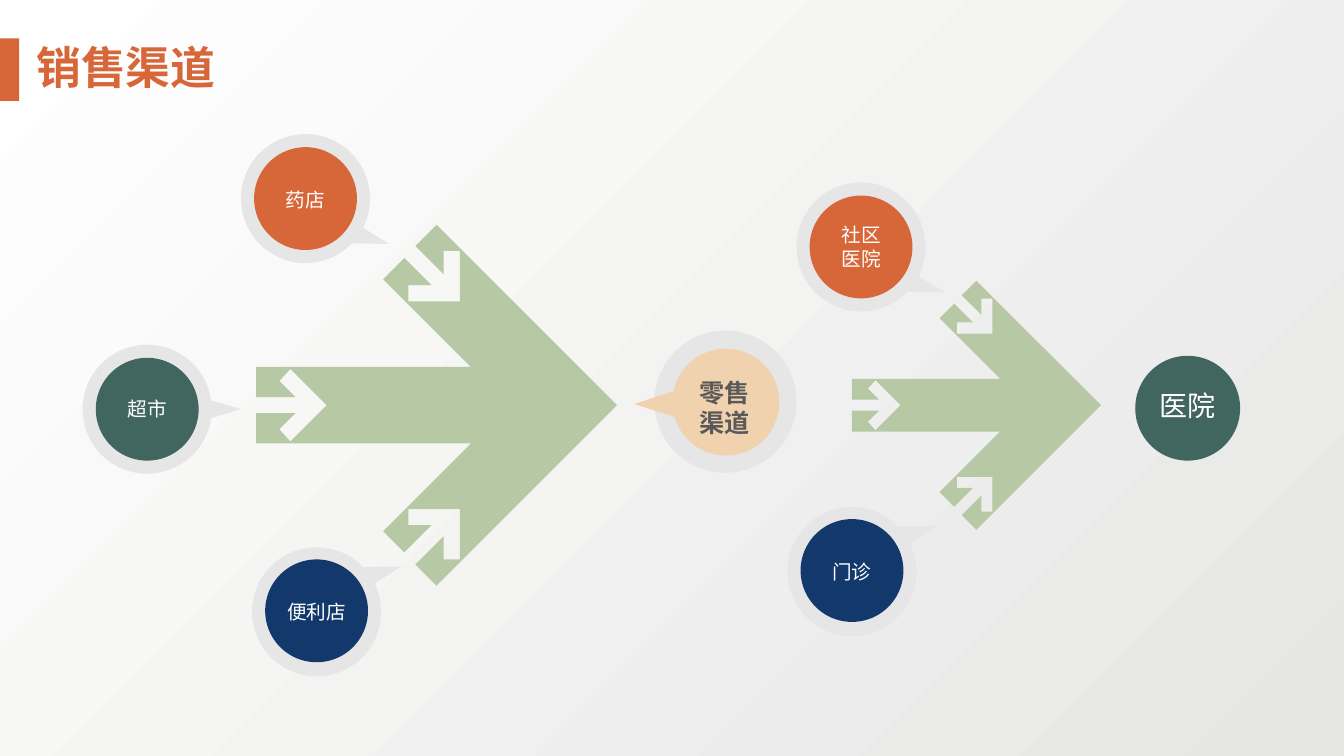
from math import cos, radians, sin

from lxml import etree
from pptx import Presentation
from pptx import util as u
from pptx.dml.color import RGBColor
from pptx.enum import shapes, text
from pptx.oxml.ns import qn

FONT = "Noto Sans CJK SC"
HUES = {
    "rust": "D76739", "pine": "416660", "navy": "13396C", "sand": "F0D2AF",
    "sage": "B7C8A5", "mist": "E7E6E6", "ink": "595959", "white": "FFFFFF",
    "haze": "E6E6E5",
}


def paint(shape, hue):
    shape.shadow.inherit = False
    shape.fill.solid()
    shape.fill.fore_color.rgb = RGBColor.from_string(HUES[hue])
    shape.line.fill.background()
    return shape


def write(shape, words, size=14, hue="white", bold=False):
    """Fill a shape with centred text, one paragraph a line."""
    frame = shape.text_frame
    frame.word_wrap = True
    frame.auto_size = text.MSO_AUTO_SIZE.NONE
    frame.vertical_anchor = text.MSO_ANCHOR.MIDDLE
    frame.margin_left = frame.margin_right = 0
    frame.margin_top = frame.margin_bottom = 0
    frame.text = words
    for para in frame.paragraphs:
        para.alignment = text.PP_ALIGN.CENTER
        font = para.runs[0].font
        font.name, font.size, font.bold = FONT, u.Pt(size), bold
        font.color.rgb = RGBColor.from_string(HUES[hue])
        east = etree.SubElement(para.runs[0]._r.get_or_add_rPr(), qn("a:ea"))
        east.set("typeface", FONT)


deck = Presentation()
deck.slide_width, deck.slide_height = u.Inches(13.33), u.Inches(7.5)
col, row = deck.slide_width / 13.33, deck.slide_height / 7.5
slide = deck.slides.add_slide(deck.slide_layouts[5])
add = slide.shapes.add_shape
OVAL = shapes.MSO_SHAPE.OVAL

# Background
back = slide.background.fill
back.gradient()
back.gradient_angle = 135
for stop, hue in zip(back.gradient_stops, ("haze", "white")):
    stop.color.rgb = RGBColor.from_string(HUES[hue])

# Title
paint(add(shapes.MSO_SHAPE.RECTANGLE, 0, int(0.38 * row),
          int(0.19 * col), int(0.62 * row)), "rust")
title = slide.shapes.title
title.left, title.top = int(0.02 * col), int(0.34 * row)
title.width, title.height = int(2.46 * col), int(0.64 * row)
write(title, "销售渠道", size=32, hue="rust", bold=True)

# Merging arrows: upper half, measured from the tip, then mirrored
half = [
    (0, 0), (-1.79, -1.79), (-2, -1.58), (-1.72, -1.3), (-1.72, -1.53),
    (-1.56, -1.53), (-1.56, -1.03), (-2.07, -1.03), (-2.07, -1.19),
    (-1.84, -1.19), (-2.11, -1.46), (-2.32, -1.25), (-1.45, -0.38),
    (-3.58, -0.38), (-3.58, -0.08), (-3.19, -0.08), (-3.35, -0.24),
    (-3.24, -0.36), (-2.88, 0),
]
arrow = half + [(x, -y) for x, y in half[-2:0:-1]]
for tip, zoom in ((6.12, 1), (10.92, 0.69)):
    dots = [(int((tip + zoom * x) * col), int((4.02 + zoom * y) * row))
            for x, y in arrow]
    pen = slide.shapes.build_freeform(*dots[0])
    pen.add_line_segments(dots[1:], close=True)
    paint(pen.convert_to_shape(), "sage")

# Ring behind the retail bubble
paint(add(OVAL, int(6.49 * col), int(3.28 * row),
          int(1.41 * col), int(1.41 * row)), "mist")

# Bubbles: centre, radius, tail tip from centre, tail's two angles, colour
down, flat, up = (0.83, 0.45, 27, 44), (0.93, 0, -8, 8), (0.84, -0.45, -44, -26)
bubbles = [
    (3.03, 1.97, 0.64, down, "mist"),
    (1.46, 4.06, 0.64, flat, "mist"),
    (3.14, 6.07, 0.64, up, "mist"),
    (7.2, 3.99, 0.53, (-0.91, 0.02, 164, 192), "sand"),
    (8.54, 2.45, 0.64, down, "mist"),
    (8.45, 5.67, 0.64, up, "mist"),
]
for x, y, r, (dx, dy, near, far), hue in bubbles:
    last = 360 + near
    turns = [far] + [a for a in range(0, 541, 90) if far < a < last] + [last]
    rim = [(int((x + r * cos(radians(a))) * col),
            int((y + r * sin(radians(a))) * row)) for a in turns]
    pen = slide.shapes.build_freeform(int((x + dx) * col), int((y + dy) * row))
    pen.add_line_segments(rim, close=True)
    bubble = paint(pen.convert_to_shape(), hue)
    # Round the rim: every line after the first becomes an arc
    lines = list(bubble._element.iter(qn("a:lnTo")))[1:]
    for line, a, b in zip(lines, turns, turns[1:]):
        arc = etree.Element(qn("a:arcTo"), wR=str(int(r * col)),
                            hR=str(int(r * row)), stAng=str(a % 360 * 60000),
                            swAng=str((b - a) * 60000))
        line.getparent().replace(line, arc)

# Discs
discs = [
    (3.03, 1.97, 0.51, "rust"), (1.46, 4.06, 0.51, "pine"),
    (3.14, 6.06, 0.51, "navy"), (8.54, 2.45, 0.51, "rust"),
    (8.45, 5.66, 0.51, "navy"), (11.78, 4.05, 0.52, "pine"),
]
for x, y, r, hue in discs:
    paint(add(OVAL, int((x - r) * col), int((y - r) * row),
              int(2 * r * col), int(2 * r * row)), hue)

# Labels: centre, box, words, format
labels = [
    (3.03, 1.98, 0.83, 0.34, "药店", {}),
    (1.46, 4.05, 0.83, 0.34, "超市", {}),
    (3.14, 6.07, 0.83, 0.34, "便利店", {}),
    (7.19, 4.04, 0.98, 0.71, "零售\n渠道",
     {"size": 18, "hue": "ink", "bold": True}),
    (11.78, 4.02, 0.83, 0.44, "医院", {"size": 20}),
    (8.54, 2.45, 0.83, 0.57, "社区\n医院", {}),
    (8.45, 5.67, 0.83, 0.34, "门诊", {}),
]
for x, y, w, h, words, style in labels:
    box = slide.shapes.add_textbox(int((x - w / 2) * col), int((y - h / 2) * row),
                                   int(w * col), int(h * row))
    write(box, words, **style)

deck.save("out.pptx")
